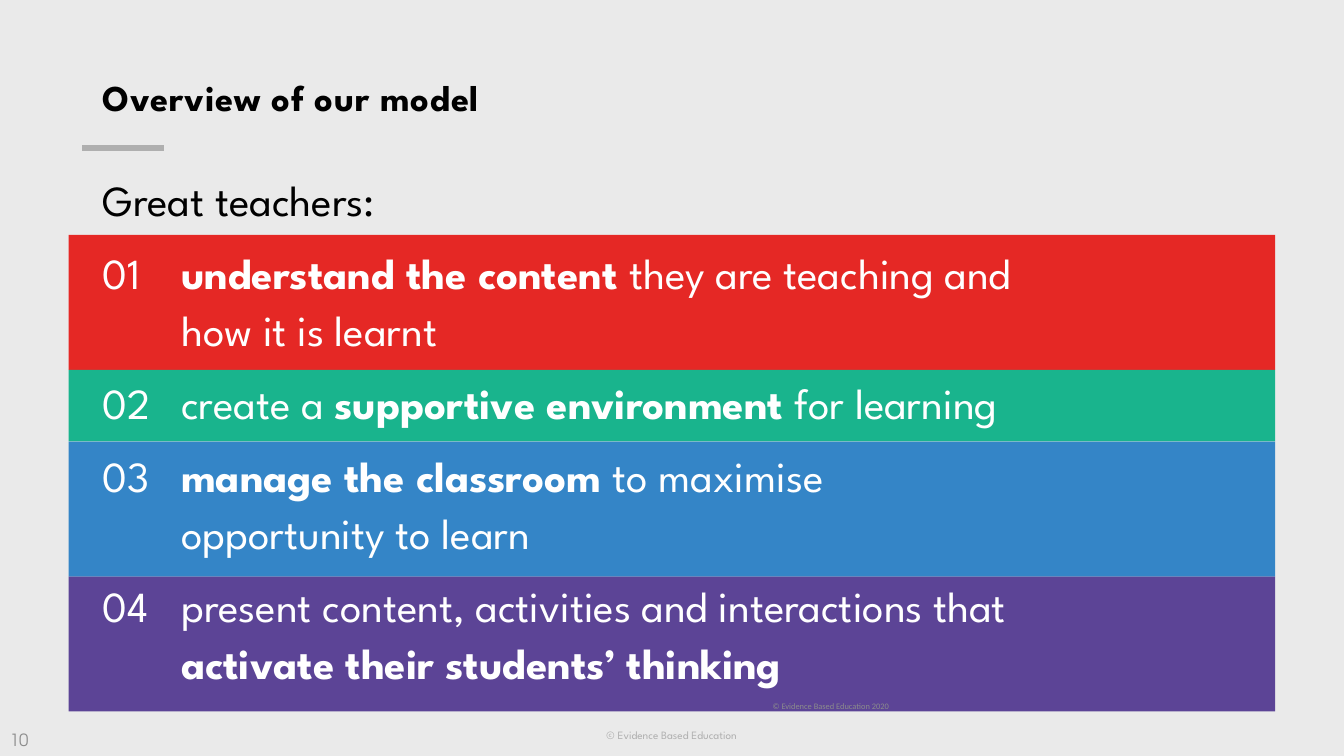
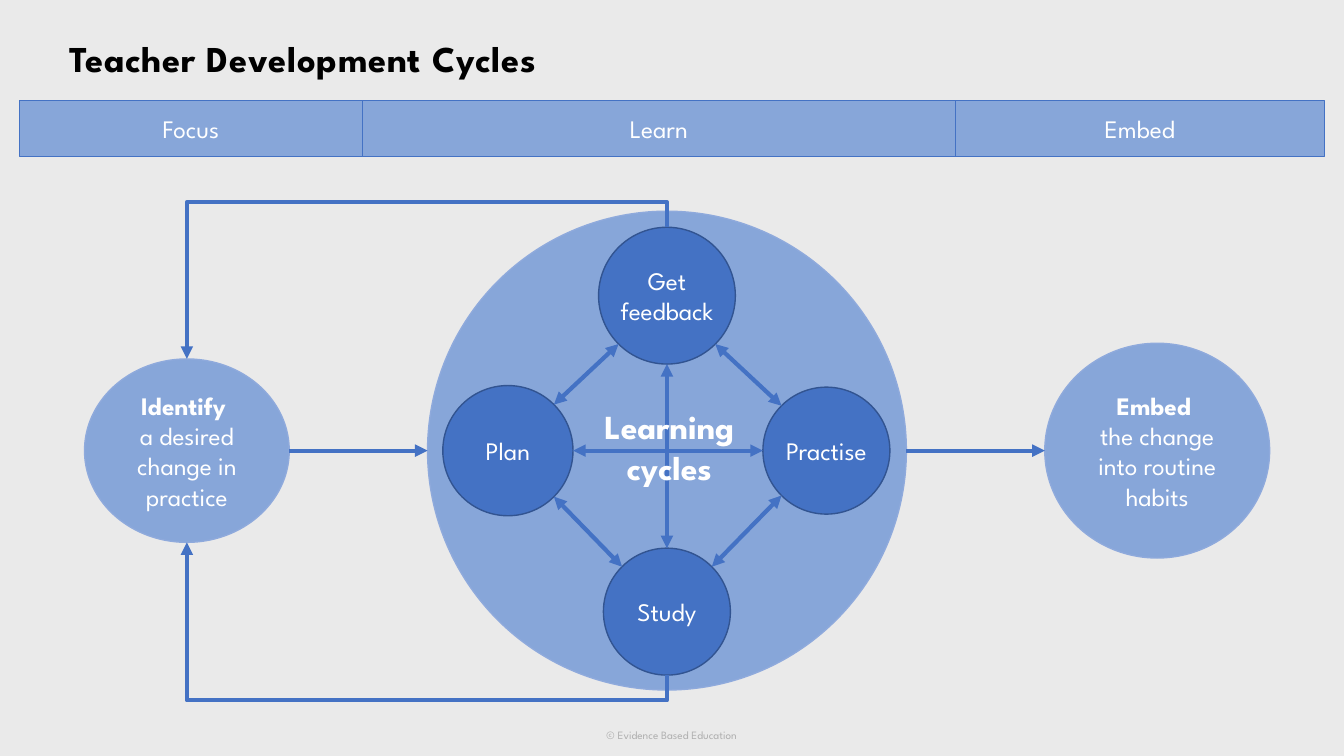
from dataclasses import dataclass
from itertools import accumulate
from math import hypot
from typing import Any, NamedTuple

from lxml.etree import SubElement
from pptx import Presentation
from pptx.dml.color import RGBColor
from pptx.enum.shapes import MSO_CONNECTOR as Link, MSO_SHAPE as Preset
from pptx.enum.text import MSO_ANCHOR as Anchor, PP_ALIGN as Align
from pptx.oxml.ns import qn
from pptx.util import Pt

# Shared look
SPARTAN = "League Spartan"
PAPER, BLACK, WHITE = "EAEAEA", "000000", "FFFFFF"
SILVER, GREY = "AFAFAF", "8C8C8C"
PALE, PALE_EDGE = "87A6D9", "8FAADC"
BLUE, BLUE_EDGE = "4472C4", "325491"
TITLE = dict(size=26, bold=True, color=BLACK)
LABEL = dict(size=18, color=WHITE)
INSETS = (7.2, 3.6, 7.2, 3.6)


class Area(NamedTuple):
    left: float
    top: float
    width: float
    height: float


class Span(NamedTuple):
    text: str
    bold: bool = False


class Point(NamedTuple):
    x: float
    y: float


@dataclass(frozen=True)
class Band:
    color: str
    height: float
    number: str
    spans: tuple[Span, ...]


@dataclass(frozen=True)
class Oval:
    x: float
    y: float
    width: float
    height: float
    spans: tuple[Span, ...] = ()
    fill: str = PALE
    edge: str = PALE_EDGE
    insets: tuple[float, ...] = INSETS

    @property
    def area(self) -> Area:
        return Area(self.x - self.width / 2, self.y - self.height / 2,
                    self.width, self.height)

    def site(self, dx: int, dy: int) -> Point:
        """Point on the outline in one of eight directions."""
        reach = hypot(dx, dy) * 2
        return Point(self.x + dx * self.width / reach,
                     self.y + dy * self.height / reach)


# Helpers
def rgb(color: str) -> RGBColor:
    return RGBColor.from_string(color)


def lengths(values) -> list:
    return [Pt(value) for value in values]


def set_all(target: Any, values: dict) -> None:
    for name, value in values.items():
        setattr(target, name, value)


def hang(para, distance: float) -> None:
    """Hanging indent, so that a tab reaches the text edge."""
    properties = para._p.get_or_add_pPr()
    properties.set("marL", str(Pt(distance)))
    properties.set("indent", str(-Pt(distance)))


def write(para, spans, size: float, color: str, bold: bool = False,
          font: str = SPARTAN, spacing: float = 0) -> None:
    for item in spans:
        for index, line in enumerate(item.text.split("\n")):
            if index:
                para.add_line_break()
            if not line:
                continue
            span = para.add_run()
            span.text = line
            set_all(span.font, dict(name=font, size=Pt(size), bold=bold or item.bold))
            span.font.color.rgb = rgb(color)
            if spacing:
                span.font._element.set("spc", str(round(spacing * 100)))


def set_frame(frame, anchor, insets=INSETS) -> None:
    left, top, right, bottom = lengths(insets)
    set_all(frame, dict(word_wrap=True, vertical_anchor=anchor, margin_left=left,
                        margin_top=top, margin_right=right, margin_bottom=bottom))


def add_text(page, area: Area, text: str, anchor=Anchor.TOP, align=Align.LEFT,
             line_spacing: float = 1.0, **style) -> None:
    frame = page.shapes.add_textbox(*lengths(area)).text_frame
    set_frame(frame, anchor)
    para = frame.paragraphs[0]
    set_all(para, dict(alignment=align, line_spacing=line_spacing))
    write(para, [Span(text)], **style)


def add_block(page, preset, area: Area, fill: str, edge: str = "",
              spans=(), insets=INSETS) -> None:
    block = page.shapes.add_shape(preset, *lengths(area))
    block.shadow.inherit = False
    block.fill.solid()
    block.fill.fore_color.rgb = rgb(fill)
    if edge:
        block.line.color.rgb = rgb(edge)
        block.line.width = Pt(1)
    else:
        block.line.fill.background()
    if spans:
        set_frame(block.text_frame, Anchor.MIDDLE, insets)
        para = block.text_frame.paragraphs[0]
        para.alignment = Align.CENTER
        write(para, spans, **LABEL)


def add_oval(page, oval: Oval) -> None:
    add_block(page, Preset.OVAL, oval.area, oval.fill, oval.edge, oval.spans, oval.insets)


def add_line(page, start: Point, end: Point, color: str = BLUE, width: float = 3,
             heads: tuple[str, ...] = (), kind=Link.STRAIGHT):
    line = page.shapes.add_connector(kind, *lengths(start + end))
    line.line.color.rgb = rgb(color)
    line.line.width = Pt(width)
    stroke = line.line._get_or_add_ln()
    for head in heads:
        SubElement(stroke, qn(f"a:{head}"), type="triangle")
    SubElement(line._element.spPr, qn("a:effectLst"))
    return line


def add_return(page, start: Point, end: Point, overshoot: float) -> None:
    """Elbow arrow that leaves start away from end, then turns back to it."""
    middle = Point((start.x + end.x) / 2, (start.y + end.y) / 2)
    half_width, half_height = abs(end.y - start.y) / 2, abs(end.x - start.x) / 2
    falling = end.y > start.y
    side = half_height if falling else -half_height
    elbow = add_line(page, Point(middle.x + half_width, middle.y + side),
                     Point(middle.x - half_width, middle.y - side),
                     heads=("tailEnd",), kind=Link.ELBOW)
    shape = elbow._element.spPr
    shape.find(qn("a:xfrm")).set("rot", str((270 if falling else 90) * 60000))
    preset = shape.find(qn("a:prstGeom"))
    guides = preset.find(qn("a:avLst"))
    if guides is None:
        guides = SubElement(preset, qn("a:avLst"))
    ratio = round(-overshoot / (2 * half_width) * 100000)
    SubElement(guides, qn("a:gd"), name="adj1", fmla=f"val {ratio}")


def add_page(deck, title: str, title_area: Area):
    page = deck.slides.add_slide(deck.slide_layouts[6])
    page.background.fill.solid()
    page.background.fill.fore_color.rgb = rgb(PAPER)
    add_text(page, Area(407.5, 516.2, 144.8, 17.3), "© Evidence Based Education",
             Anchor.MIDDLE, Align.CENTER, size=8, color=SILVER)
    add_text(page, title_area, title, Anchor.BOTTOM, line_spacing=1.1,
             spacing=0.5, **TITLE)
    return page


# Overview of the model
TALL, SHORT = 96.4, 51.2
BANDS = [
    Band("E52825", TALL, "01", (Span("understand the content ", True),
                                Span("they are teaching and \nhow it is learnt"))),
    Band("19B48D", SHORT, "02", (Span("create a "), Span("supportive environment ", True),
                                 Span("for learning"))),
    Band("3485C7", TALL, "03", (Span("manage the classroom ", True),
                                Span("to maximise \nopportunity to learn"))),
    Band("5C4496", TALL, "04",
         (Span("present content, activities and interactions that \n"),
          Span("activate their students’ thinking", True))),
]


def build_overview(deck) -> None:
    page = add_page(deck, "Overview of our model", Area(66.2, 28.8, 828, 59.8))
    add_line(page, Point(58.8, 105.8), Point(117.2, 105.8), SILVER, 4.75)

    # Coloured bands
    tops = accumulate((band.height for band in BANDS), initial=167.8)
    for band, top in zip(BANDS, tops):
        add_block(page, Preset.RECTANGLE, Area(49, top, 861.8, band.height), band.color)

    # Numbered statements
    box = page.shapes.add_textbox(*lengths(Area(66.2, 116.6, 828, 408.2)))
    frame = box.text_frame
    set_frame(frame, Anchor.TOP)
    intro = frame.paragraphs[0]
    intro.line_spacing = 1.1
    write(intro, [Span("Great teachers:")], 30.6, BLACK)
    for band in BANDS:
        para = frame.add_paragraph()
        set_all(para, dict(line_spacing=1.1, space_before=Pt(12)))
        hang(para, 56.2)
        write(para, (Span(f"{band.number}\t"),) + band.spans, 30.6, WHITE)

    # Small print
    add_text(page, Area(318, 482.4, 324, 28.8), "© Evidence Based Education 2020",
             Anchor.BOTTOM, Align.RIGHT, size=6, color=GREY, font="Calibri")
    add_text(page, Area(0, 510.5, 216, 28.8), "10", Anchor.BOTTOM,
             size=12, color=GREY, font="TeX Gyre Adventor")


# Teacher development cycles
PHASES = [("Focus", 244.8), ("Learn", 423.6), ("Embed", 263.5)]
AXIS_X, AXIS_Y = 476.4, 321.9


def step(text: str, x: float, y: float, size: float, insets=INSETS) -> Oval:
    return Oval(x, y, size, size, (Span(text),), BLUE, BLUE_EDGE, insets)


def build_cycles(deck) -> None:
    page = add_page(deck, "Teacher Development Cycles", Area(42.5, 20.9, 815.8, 39.6))

    # Ovals
    cycle = Oval(AXIS_X, AXIS_Y, 342, 342)
    identify = Oval(133.5, AXIS_Y, 146.2, 131,
                    (Span("Identify \n", True), Span("a desired change in practice")))
    embed = Oval(826.6, AXIS_Y, 160.6, 153.4,
                 (Span("Embed \n", True), Span("the change into routine habits")))
    tight = (0, 0, 0, 0)
    plan = step("Plan", 362.8, AXIS_Y, 93)
    study = step("Study", AXIS_X, 436.9, 90.7)
    practise = step("Practise", 590.3, AXIS_Y, 90.7, tight)
    feedback = step("Get feedback", AXIS_X, 211.2, 97.7, tight)
    for oval in (cycle, identify, plan, study, practise, feedback, embed):
        add_oval(page, oval)

    # Straight arrows: from, to, direction, heads
    both, forward = ("headEnd", "tailEnd"), ("tailEnd",)
    for source, target, dx, dy, heads in [
        (plan, study, 1, 1, both),
        (study, practise, 1, -1, both),
        (plan, feedback, 1, -1, both),
        (feedback, practise, 1, 1, both),
        (plan, practise, 1, 0, both),
        (feedback, study, 0, 1, both),
        (identify, cycle, 1, 0, forward),
        (cycle, embed, 1, 0, forward),
    ]:
        add_line(page, source.site(dx, dy), target.site(-dx, -dy), heads=heads)
    add_text(page, Area(398.5, 286.6, 159.1, 65.5), "Learning cycles",
             align=Align.CENTER, size=24, color=WHITE, bold=True)

    # Arrows back to the start
    for source, dy in ((study, 1), (feedback, -1)):
        add_return(page, source.site(0, dy), identify.site(0, dy), 18)

    # Phase bar
    lefts = accumulate((width for _, width in PHASES), initial=14)
    for (name, width), left in zip(PHASES, lefts):
        add_block(page, Preset.RECTANGLE, Area(left, 72, width, 39.8), PALE, BLUE,
                  (Span(name),))


def main() -> None:
    deck = Presentation()
    set_all(deck, dict(slide_width=Pt(960), slide_height=Pt(540)))
    build_overview(deck)
    build_cycles(deck)
    deck.save("out.pptx")


if __name__ == "__main__":
    main()
